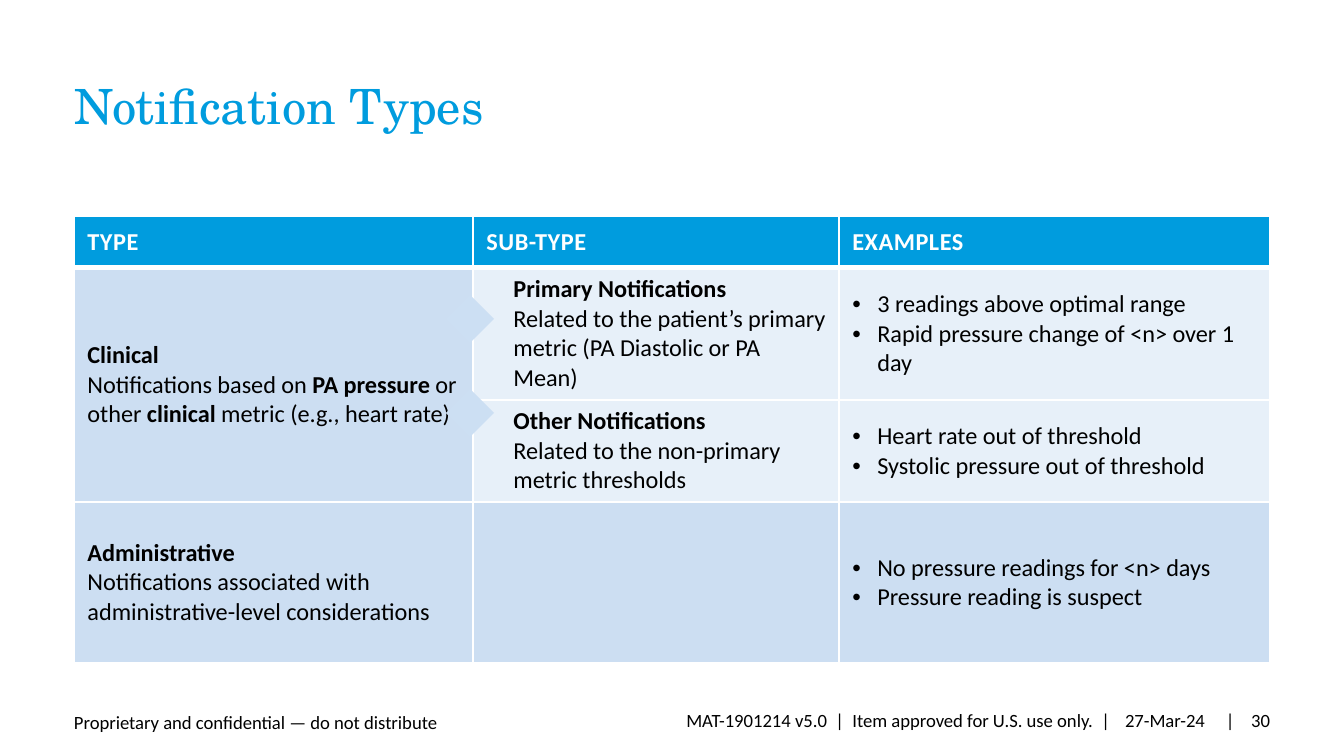
from lxml import etree
from pptx import Presentation
from pptx.dml.color import RGBColor
from pptx.enum.shapes import MSO_SHAPE
from pptx.enum.text import MSO_ANCHOR, MSO_AUTO_SIZE, PP_ALIGN
from pptx.oxml.ns import qn
from pptx.util import Pt

TOP, MIDDLE, BOTTOM = MSO_ANCHOR.TOP, MSO_ANCHOR.MIDDLE, MSO_ANCHOR.BOTTOM
LEFT, CENTER, RIGHT = PP_ALIGN.LEFT, PP_ALIGN.CENTER, PP_ALIGN.RIGHT

BLUE = RGBColor(0x00, 0x9C, 0xDE)
MEDIUM = RGBColor(0xCC, 0xDE, 0xF2)
PALE = RGBColor(0xE7, 0xF0, 0xF9)
ARROW = RGBColor(0xCC, 0xDF, 0xF3)
WHITE = RGBColor(0xFF, 0xFF, 0xFF)
BLACK = RGBColor(0x00, 0x00, 0x00)
BODY_FONT, TITLE_FONT = "Calibri", "TeX Gyre Schola"

TITLE = "Notification Types"
HEADINGS = ["TYPE", "SUB-TYPE", "EXAMPLES"]
# Each paragraph is a list of runs; bold runs are wrapped in a one-item tuple.
TYPES = {
    1: [[("Clinical",)],
        ["Notifications based on ", ("PA pressure ",), "or other ",
         ("clinical",), " metric (e.g., heart rate)"]],
    3: [[("Administrative",)],
        ["Notifications associated with administrative-level considerations"]],
}
SUB_TYPES = {
    1: [[("Primary Notifications",)],
        ["Related to the patient’s primary metric (PA Diastolic or PA Mean)"]],
    2: [[("Other Notifications",)],
        ["Related to the non-primary metric thresholds"]],
}
EXAMPLES = {
    1: [["3 readings above optimal range"],
        ["Rapid pressure change of <n> over 1 day"]],
    2: [["Heart rate out of threshold"],
        ["Systolic pressure out of threshold"]],
    3: [["No pressure readings for <n> days"],
        ["Pressure reading is suspect"]],
}
# text, box (left, top, width, height), alignment, anchor, left and right inset
FOOTERS = [
    ("Proprietary and confidential — do not distribute",
     (74, 708, 449, 32), LEFT, BOTTOM, 0, 0),
    ("27-Mar-24", (1107, 700, 116, 40), CENTER, MIDDLE, 13, 13),
    ("MAT-1901214 v5.0  |  Item approved for U.S. use only.  | ",
     (536, 700, 578, 40), RIGHT, MIDDLE, 13, 0),
    ("|    30", (1200, 700, 83, 40), RIGHT, MIDDLE, 0, 13),
]
TITLE_BOX = (74, 83, 1196, 58)
TABLE_LEFT, TABLE_TOP = 74, 216
COLUMNS = [399, 366, 431]
ROWS = [52, 132, 102, 161]
ARROW_SIZE, ARROW_TOPS = 34, [302, 396]
SUB_TYPE_INDENT, BULLET_INDENT = 27, 25


def px(length):
    return round(length * 914400 / 134.4)


def place(shape, box):
    shape.left, shape.top, shape.width, shape.height = map(px, box)


def set_frame(frame, anchor, left, top, right, bottom):
    frame.word_wrap = True
    frame.auto_size = MSO_AUTO_SIZE.NONE
    frame.vertical_anchor = anchor
    frame.margin_left, frame.margin_top = px(left), px(top)
    frame.margin_right, frame.margin_bottom = px(right), px(bottom)


def add_run(para, text, size, color, bold=False, font=BODY_FONT):
    span = para.add_run()
    span.text = text
    span.font.size, span.font.name, span.font.bold = Pt(size), font, bold
    span.font.color.rgb = color
    return span


def set_border(cell, bottom_width=1):
    widths = {"a:lnL": 1, "a:lnR": 1, "a:lnT": 1, "a:lnB": bottom_width}
    properties = cell._tc.get_or_add_tcPr()
    for tag, width in widths.items():
        line = etree.SubElement(properties, qn(tag), w=str(Pt(width)))
        fill = etree.SubElement(line, qn("a:solidFill"))
        etree.SubElement(fill, qn("a:srgbClr"), val=str(WHITE))


def fill_cell(cell, paragraphs, indent=0, bullet=False):
    for number, runs in enumerate(paragraphs):
        frame = cell.text_frame
        para = frame.add_paragraph() if number else frame.paragraphs[0]
        properties = para._p.get_or_add_pPr()
        properties.set("marL", str(px(indent)))
        if bullet:
            properties.set("indent", str(-px(indent)))
            etree.SubElement(properties, qn("a:buFont"), typeface="Arial")
            etree.SubElement(properties, qn("a:buChar"), char="•")
        for part in runs:
            bold = isinstance(part, tuple)
            add_run(para, part[0] if bold else part, 13, BLACK, bold)


def add_title(slide):
    title = slide.shapes.title
    place(title, TITLE_BOX)
    set_frame(title.text_frame, TOP, 0, 0, 13, 7)
    para = title.text_frame.paragraphs[0]
    para.alignment, para.line_spacing = LEFT, 0.9
    add_run(para, TITLE, 26, BLUE, font=TITLE_FONT)


def add_footers(slide):
    for text, box, alignment, anchor, left, right in FOOTERS:
        footer = slide.shapes.add_textbox(*map(px, box))
        set_frame(footer.text_frame, anchor, left, 7, right, 7)
        para = footer.text_frame.paragraphs[0]
        para.alignment = alignment
        add_run(para, text, 10, BLACK)


def add_notification_table(slide):
    table = slide.shapes.add_table(
        len(ROWS), len(COLUMNS), px(TABLE_LEFT), px(TABLE_TOP),
        px(sum(COLUMNS)), px(sum(ROWS))).table
    for column, width in zip(table.columns, COLUMNS):
        column.width = px(width)
    for row, height in zip(table.rows, ROWS):
        row.height = px(height)

    for row in range(len(ROWS)):
        for column in range(len(COLUMNS)):
            cell = table.cell(row, column)
            cell.vertical_anchor = MIDDLE
            set_border(cell, 1 if row else 3)
            cell.fill.solid()
            if row == 0:
                color = BLUE
            else:
                color = MEDIUM if column == 0 or row == 3 else PALE
            cell.fill.fore_color.rgb = color

    for column, heading in enumerate(HEADINGS):
        cell = table.cell(0, column)
        cell.margin_top = cell.margin_bottom = px(5)
        span = add_run(cell.text_frame.paragraphs[0], heading, 13, WHITE, True)
        span.font._element.set("spc", "30")

    table.cell(1, 0).merge(table.cell(2, 0))
    for row, paragraphs in TYPES.items():
        fill_cell(table.cell(row, 0), paragraphs)
    for row, paragraphs in SUB_TYPES.items():
        fill_cell(table.cell(row, 1), paragraphs, SUB_TYPE_INDENT)
    for row, paragraphs in EXAMPLES.items():
        fill_cell(table.cell(row, 2), paragraphs, BULLET_INDENT, bullet=True)


def add_arrows(slide):
    """Turned squares whose right corners point from Clinical to its sub-types."""
    center = TABLE_LEFT + COLUMNS[0] - 3
    for top in ARROW_TOPS:
        box = (center - ARROW_SIZE / 2, top, ARROW_SIZE, ARROW_SIZE)
        arrow = slide.shapes.add_shape(MSO_SHAPE.RECTANGLE, *map(px, box))
        arrow.rotation = 45
        arrow.shadow.inherit = False
        arrow.fill.solid()
        arrow.fill.fore_color.rgb = ARROW
        arrow.line.fill.background()


def main():
    deck = Presentation()
    deck.slide_width, deck.slide_height = px(1344), px(756)
    slide = deck.slides.add_slide(deck.slide_layouts.get_by_name("Title Only"))
    add_footers(slide)
    add_title(slide)
    add_notification_table(slide)
    add_arrows(slide)
    deck.save("out.pptx")


if __name__ == "__main__":
    main()
